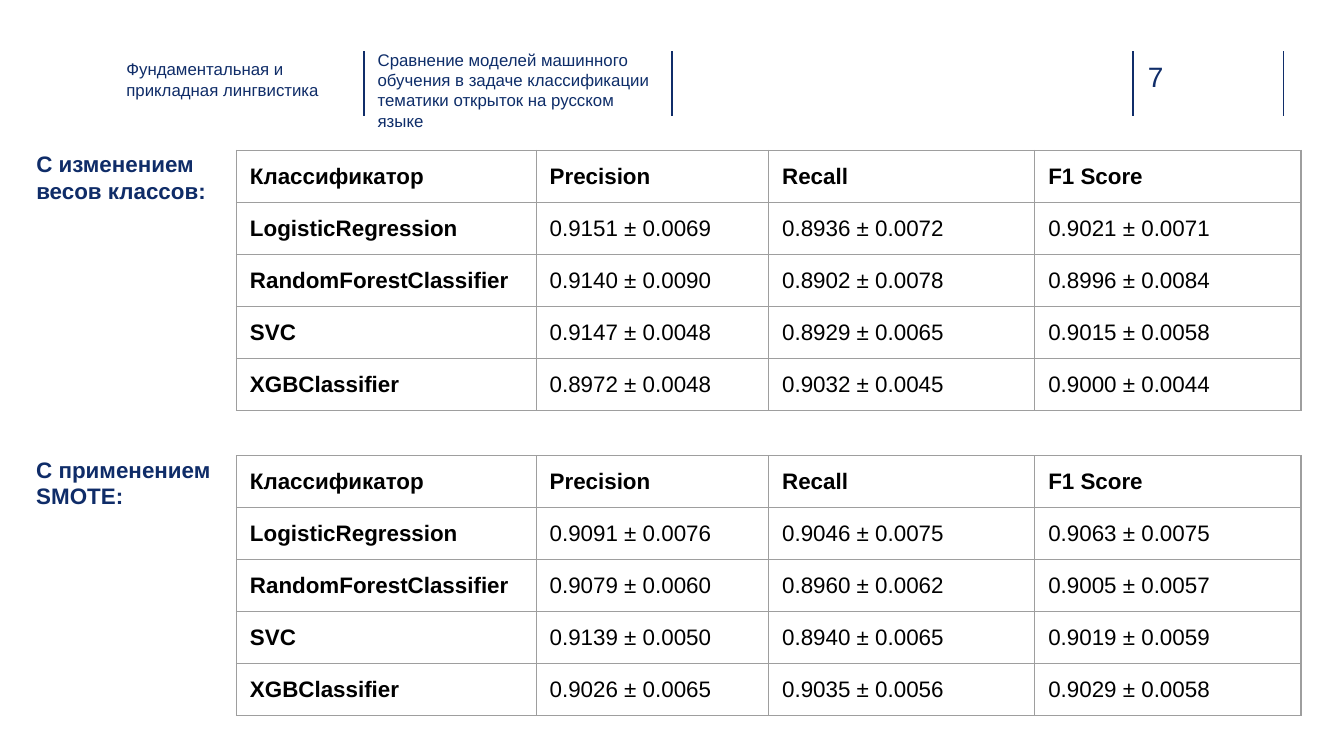
from pptx import Presentation
from pptx.dml.color import RGBColor
from pptx.enum.shapes import MSO_CONNECTOR
from pptx.enum.text import MSO_ANCHOR, MSO_AUTO_SIZE, PP_ALIGN
from pptx.oxml.ns import qn
from pptx.util import Inches, Pt
from lxml import etree

STRAIGHT = MSO_CONNECTOR.STRAIGHT
TOP, LEFT, NO_FIT = MSO_ANCHOR.TOP, PP_ALIGN.LEFT, MSO_AUTO_SIZE.NONE
FONT = "Arial"
COLORS = {"rule": "102D69", "label": "0F2C68", "topic": "0E2D69",
          "text": "000000", "border": "9E9E9E", "cell": "FFFFFF"}

HEADERS = ["Классификатор", "Precision", "Recall", "F1 Score"]
COL_WIDTHS = [2.23, 1.73, 1.98, 1.98]
ROW_HEIGHT = 0.38
WEIGHTED = [
    ["LogisticRegression", "0.9151 ± 0.0069", "0.8936 ± 0.0072", "0.9021 ± 0.0071"],
    ["RandomForestClassifier", "0.9140 ± 0.0090", "0.8902 ± 0.0078", "0.8996 ± 0.0084"],
    ["SVC", "0.9147 ± 0.0048", "0.8929 ± 0.0065", "0.9015 ± 0.0058"],
    ["XGBClassifier", "0.8972 ± 0.0048", "0.9032 ± 0.0045", "0.9000 ± 0.0044"],
]
SMOTE = [
    ["LogisticRegression", "0.9091 ± 0.0076", "0.9046 ± 0.0075", "0.9063 ± 0.0075"],
    ["RandomForestClassifier", "0.9079 ± 0.0060", "0.8960 ± 0.0062", "0.9005 ± 0.0057"],
    ["SVC", "0.9139 ± 0.0050", "0.8940 ± 0.0065", "0.9019 ± 0.0059"],
    ["XGBClassifier", "0.9026 ± 0.0065", "0.9035 ± 0.0056", "0.9029 ± 0.0058"],
]


def rgb(name):
    return RGBColor.from_string(COLORS[name])


def style_font(font, size, color, bold=False):
    font.name, font.size, font.bold = FONT, Pt(size), bold
    font.color.rgb = rgb(color)


def put_text(shape, box, text, size, color, bold=False):
    shape.left, shape.top, shape.width, shape.height = map(Inches, box)
    tf = shape.text_frame
    tf.text = text
    tf.word_wrap, tf.auto_size, tf.vertical_anchor = True, NO_FIT, TOP
    tf.margin_left = tf.margin_top = tf.margin_right = tf.margin_bottom = 0
    for p in tf.paragraphs:
        pPr = p._p.get_or_add_pPr()
        pPr.set("marL", "0")
        pPr.set("indent", "0")
        etree.SubElement(pPr, qn("a:buNone"))
        p.alignment, p.line_spacing, p.space_before = LEFT, 1.0, Pt(0)
        for r in p.runs:
            style_font(r.font, size, color, bold)


def add_header(s, x, y, height, program, topic):
    for dx in (0, 2.29, 5.72, 6.84):
        line = s.shapes.add_connector(STRAIGHT, Inches(x + dx), Inches(y),
                                      Inches(x + dx), Inches(y + height))
        line.line.color.rgb, line.line.width = rgb("rule"), Pt(1)
        etree.SubElement(line._element.spPr, qn("a:effectLst"))
    number = s.shapes.add_textbox(0, 0, 0, 0)
    put_text(number, (x + 5.83, y + 0.06, 0.55, 0.25), "7", 15, "rule")
    put_text(topic, (x + 0.1, y - 0.01, 2.02, 0.33),
             "Сравнение моделей машинного обучения в задаче классификации "
             "тематики открыток на русском языке", 9, "topic")
    put_text(program, (x - 1.77, y + 0.06, 1.56, 0.34),
             "Фундаментальная и прикладная лингвистика", 9, "label")


def set_borders(cell):
    tcPr = cell._tc.get_or_add_tcPr()
    for i, side in enumerate(("a:lnL", "a:lnR", "a:lnT", "a:lnB")):
        ln = etree.Element(qn(side), w=str(Pt(0.75)))
        fill = etree.SubElement(ln, qn("a:solidFill"))
        etree.SubElement(fill, qn("a:srgbClr"), val=COLORS["border"])
        tcPr.insert(i, ln)


def add_results(s, x, y, label, text, scores):
    put_text(label, (x, y, 9.07, 0.58), text, 12, "label", True)
    rows = [HEADERS] + scores
    frame = s.shapes.add_table(len(rows), len(HEADERS), Inches(x + 1.49), Inches(y),
                               Inches(sum(COL_WIDTHS)), Inches(ROW_HEIGHT * len(rows)))
    table = frame.table
    for column, width in zip(table.columns, COL_WIDTHS):
        column.width = Inches(width)
    for i, row in enumerate(rows):
        for j, value in enumerate(row):
            cell = table.cell(i, j)
            cell.text = value
            cell.margin_left = cell.margin_right = Inches(0.1)
            cell.margin_top = cell.margin_bottom = Inches(0.1)
            cell.fill.solid()
            cell.fill.fore_color.rgb = rgb("cell")
            set_borders(cell)
            r = cell.text_frame.paragraphs[0].runs[0]
            style_font(r.font, 12, "text", i == 0 or j == 0)


def main():
    prs = Presentation()
    prs.slide_width, prs.slide_height = Inches(10), Inches(10 * 9 / 16)
    s = prs.slides.add_slide(prs.slide_layouts[3])
    title, program, topic = s.placeholders
    add_header(s, 2.71, 0.38, 0.48, program, topic)
    add_results(s, 0.27, 1.12, title, "С изменением\nвесов классов:", WEIGHTED)
    smote_label = s.shapes.add_textbox(0, 0, 0, 0)
    add_results(s, 0.27, 3.39, smote_label, "C применением\nSMOTE:", SMOTE)
    prs.save("out.pptx")


if __name__ == "__main__":
    main()
